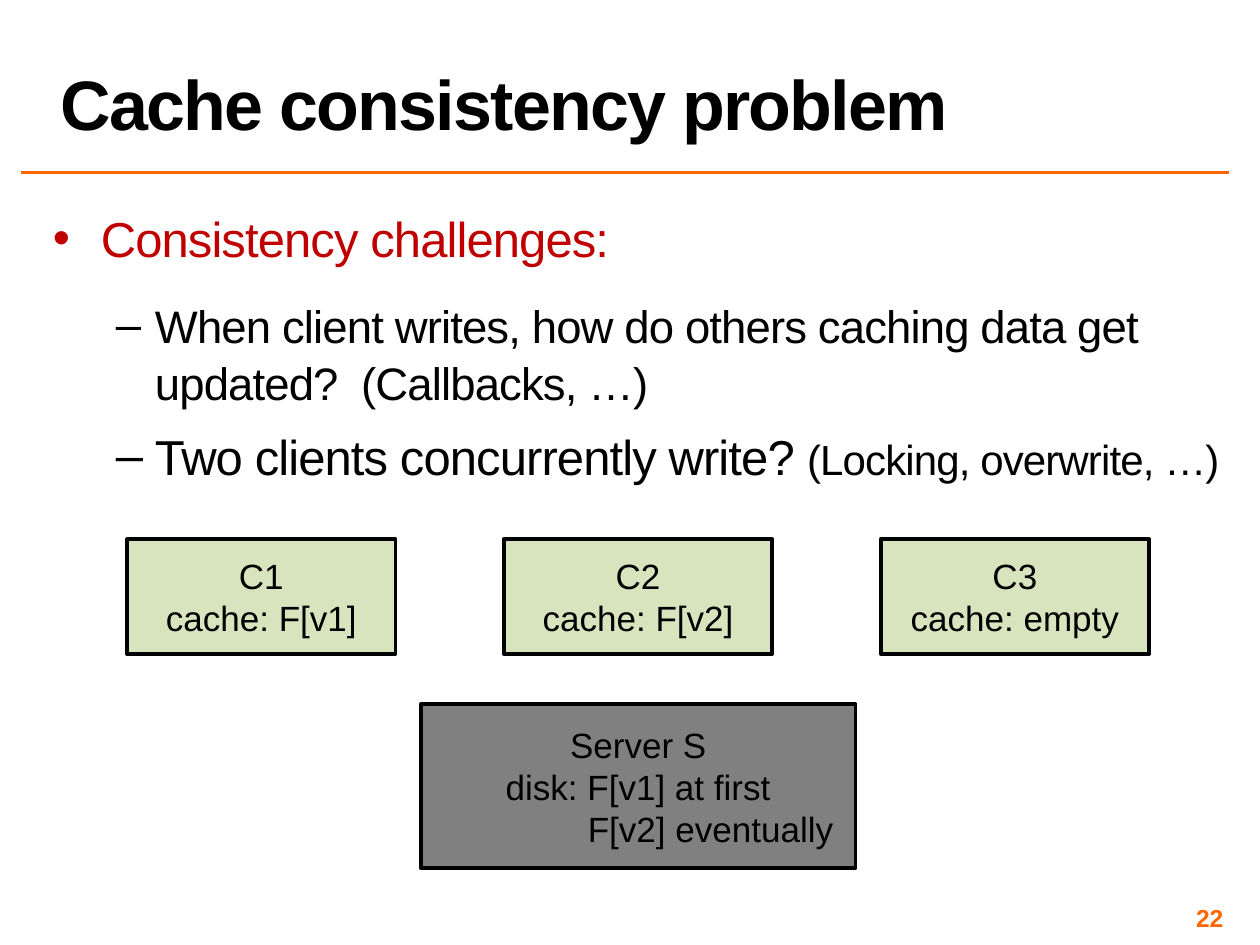
"""Build the cache consistency problem slide."""
from dataclasses import dataclass

from lxml import etree
from pptx import Presentation
from pptx.dml.color import RGBColor
from pptx.enum.shapes import MSO_CONNECTOR, MSO_SHAPE
from pptx.enum.text import MSO_ANCHOR, MSO_AUTO_SIZE, PP_ALIGN
from pptx.oxml.ns import qn
from pptx.util import Inches, Pt

RECTANGLE = MSO_SHAPE.RECTANGLE
STRAIGHT = MSO_CONNECTOR.STRAIGHT
CENTER, RIGHT = PP_ALIGN.CENTER, PP_ALIGN.RIGHT
MIDDLE, BOTTOM, TOP = MSO_ANCHOR.MIDDLE, MSO_ANCHOR.BOTTOM, MSO_ANCHOR.TOP
NO_FIT = MSO_AUTO_SIZE.NONE
FONT = "Arial"
COLORS = {
    "ink": "000000",
    "accent": "FF6600",
    "heading": "C00000",
    "client": "D7E4BD",
    "server": "808080",
}
CLIENT_LEFT, CLIENT_STEP = 1.01, 2.99


@dataclass
class Bullet:
    """One list item, with its runs as (text, size) pairs."""

    runs: list[tuple[str, int]]
    color: str = "ink"
    level: int = 1
    mark: str = "–"
    margin: float = 0.81
    hanging: float = 0.31
    before: int = 8
    after: int = 0


@dataclass
class Node:
    """A machine in the diagram; last_indent shifts its last line."""

    lines: list[str]
    left: float
    top: float
    width: float
    height: float
    fill: str
    last_indent: float = 0


BULLETS = [
    Bullet([("Consistency challenges:", 28)], "heading", 0, "•", 0.38, 0.38, 24, 8),
    Bullet([("When client writes, how do others caching data get updated?  (Callbacks, …)", 26)]),
    Bullet([("Two clients concurrently write? ", 28), ("(Locking, overwrite, …)", 24)]),
]
CACHES = ["F[v1]", "F[v2]", "empty"]
NODES = [
    Node([f"C{index + 1}", f"cache: {cache}"],
         CLIENT_LEFT + index * CLIENT_STEP, 4.28, 2.13, 0.91, "client")
    for index, cache in enumerate(CACHES)
] + [
    Node(["Server S", "disk: F[v1] at first", "F[v2] eventually"],
         3.34, 5.59, 3.45, 1.3, "server", 1.15)
]


def rgb(name: str) -> RGBColor:
    """Look up a named colour."""
    return RGBColor.from_string(COLORS[name])


def style(span, size: int, color: str = "ink", bold: bool = False, spacing: float = 0) -> None:
    """Format one run, with letter spacing in points."""
    span.font.name, span.font.size, span.font.bold = FONT, Pt(size), bold
    span.font.color.rgb = rgb(color)
    if spacing:
        span.font._element.set("spc", str(round(spacing * 100)))


def place(box, left: float, top: float, width: float, height: float) -> None:
    """Move and size a shape in inches."""
    box.left, box.top = Inches(left), Inches(top)
    box.width, box.height = Inches(width), Inches(height)


def set_frame(frame, anchor, inset: float) -> None:
    """Set wrapping, anchor and vertical and side insets."""
    frame.word_wrap, frame.auto_size, frame.vertical_anchor = True, NO_FIT, anchor
    frame.margin_left = frame.margin_right = Inches(inset)
    frame.margin_top = frame.margin_bottom = Inches(min(inset, 0.05))


def draw_title(box, text: str) -> None:
    """Fill the title placeholder."""
    place(box, 0.38, 0.02, 9.37, 1.17)
    set_frame(box.text_frame, BOTTOM, 0.1)
    box.text_frame.text = text
    para = box.text_frame.paragraphs[0]
    para.alignment, para.line_spacing = PP_ALIGN.LEFT, 0.8
    style(para.runs[0], 40, bold=True, spacing=-1)


def draw_bullets(box, bullets: list[Bullet]) -> None:
    """Fill the body placeholder with the list."""
    place(box, 0.38, 1.59, 9.37, 5.48)
    frame = box.text_frame
    set_frame(frame, TOP, 0.04)
    frame.text = "\n".join("" for _ in bullets)
    for para, bullet in zip(frame.paragraphs, bullets):
        para.level, para.line_spacing = bullet.level, 1.05
        para.space_before, para.space_after = Pt(bullet.before), Pt(bullet.after)
        properties = para._p.get_or_add_pPr()
        properties.set("marL", str(Inches(bullet.margin)))
        properties.set("indent", str(-Inches(bullet.hanging)))
        etree.SubElement(properties, qn("a:buChar")).set("char", bullet.mark)
        for text, size in bullet.runs:
            span = para.add_run()
            span.text = text
            style(span, size, bullet.color, spacing=-0.5)


def draw_rule(page) -> None:
    """Draw the line below the title."""
    rule = page.shapes.add_connector(
        STRAIGHT, Inches(0.17), Inches(1.37), Inches(9.75), Inches(1.37))
    rule.line.color.rgb, rule.line.width = rgb("accent"), Pt(2)
    etree.SubElement(rule._element.spPr, qn("a:effectLst"))


def draw_node(page, node: Node) -> None:
    """Draw a machine as a labelled rectangle."""
    box = page.shapes.add_shape(RECTANGLE, 0, 0, 0, 0)
    place(box, node.left, node.top, node.width, node.height)
    box.shadow.inherit = False
    box.fill.solid()
    box.fill.fore_color.rgb = rgb(node.fill)
    box.line.color.rgb, box.line.width = rgb("ink"), Pt(2.25)
    set_frame(box.text_frame, MIDDLE, 0.1)
    box.text_frame.text = "\n".join(node.lines)
    for para in box.text_frame.paragraphs:
        para.alignment = CENTER
        style(para.runs[0], 20)
    if node.last_indent:
        para.alignment = CENTER
        para._p.get_or_add_pPr().set("marL", str(Inches(node.last_indent)))


def draw_page_number(page, text: str) -> None:
    """Write the page number at the lower right."""
    box = page.shapes.add_textbox(Inches(7.42), Inches(7.17), Inches(2.33), Inches(0.23))
    set_frame(box.text_frame, MIDDLE, 0.04)
    box.text_frame.text = text
    para = box.text_frame.paragraphs[0]
    para.alignment = RIGHT
    style(para.runs[0], 14, "accent", bold=True)


def main() -> None:
    """Build and save the deck."""
    deck = Presentation()
    deck.slide_width, deck.slide_height = Inches(10), Inches(7.5)
    page = deck.slides.add_slide(deck.slide_layouts[1])
    draw_title(page.shapes.title, "Cache consistency problem")
    draw_bullets(page.placeholders[1], BULLETS)
    draw_rule(page)
    draw_page_number(page, "22")
    for node in NODES:
        draw_node(page, node)
    deck.save("out.pptx")


if __name__ == "__main__":
    main()
